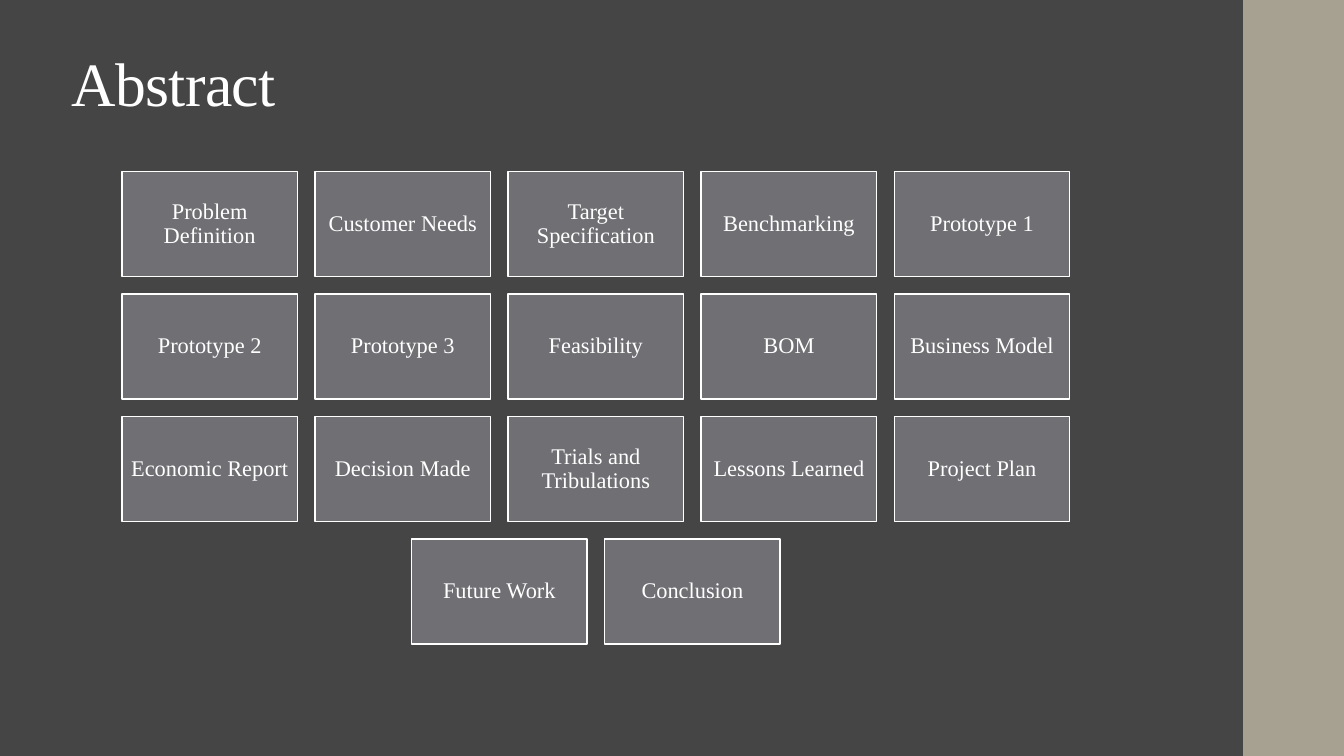
from pptx import Presentation
from pptx.dml.color import RGBColor as Rgb
from pptx.enum.shapes import MSO_SHAPE as Shape
from pptx.enum.text import MSO_ANCHOR as Anchor, MSO_AUTO_SIZE as Fit, PP_ALIGN as Align
from pptx.util import Inches, Pt

FONT = "Times New Roman"
WHITE = "FFFFFF"
DARK = "454545"
GREY = "6F6F74"
SAND = "A7A192"
COLS = 5
TOPICS = [
    "Problem Definition", "Customer Needs", "Target Specification", "Benchmarking", "Prototype 1",
    "Prototype 2", "Prototype 3", "Feasibility", "BOM", "Business Model",
    "Economic Report", "Decision Made", "Trials and Tribulations", "Lessons Learned", "Project Plan",
    "Future Work", "Conclusion",
]


def paint(fmt, color):
    fmt.solid()
    fmt.fore_color.rgb = Rgb.from_string(color)


def write(frame, text, size, align, anchor):
    frame.word_wrap = True
    frame.auto_size = Fit.NONE
    frame.vertical_anchor = anchor
    para = frame.paragraphs[0]
    para.alignment = align
    para.line_spacing = 0.9
    run = para.add_run()
    run.text = text
    run.font.name = FONT
    run.font.size = Pt(size)
    paint(run.font.fill, WHITE)
    return run


def add_rect(slide, left, top, width, height, color):
    rect = slide.shapes.add_shape(
        Shape.RECTANGLE, Inches(left), Inches(top), Inches(width), Inches(height))
    rect.shadow.inherit = False
    paint(rect.fill, color)
    rect.line.fill.background()
    return rect


def add_title(slide, text, left, top, width, height):
    title = slide.shapes.title
    title.left, title.top = Inches(left), Inches(top)
    title.width, title.height = Inches(width), Inches(height)
    run = write(title.text_frame, text, 44, Align.LEFT, Anchor.BOTTOM)
    run._r.get_or_add_rPr().set("spc", "-50")


def add_tile(slide, text, left, top, width, height):
    tile = add_rect(slide, left, top, width, height, GREY)
    paint(tile.line.fill, WHITE)
    tile.line.width = Pt(1.1)
    frame = tile.text_frame
    frame.margin_left = frame.margin_right = Inches(0.07)
    frame.margin_top = frame.margin_bottom = Inches(0.07)
    write(frame, text, 16, Align.CENTER, Anchor.MIDDLE)


def add_grid(slide, topics, left, top, width, height):
    gap = 0.175
    rows = [topics[i:i + COLS] for i in range(0, len(topics), COLS)]
    wide = (width - gap * (COLS - 1)) / COLS
    tall = (height - gap * (len(rows) - 1)) / len(rows)
    for r, row in enumerate(rows):
        inset = (COLS - len(row)) * (wide + gap) / 2
        for c, topic in enumerate(row):
            x = left + inset + c * (wide + gap)
            y = top + r * (tall + gap)
            add_tile(slide, topic, x, y, wide, tall)


def main():
    deck = Presentation()
    deck.slide_width, deck.slide_height = Inches(13.33), Inches(7.5)
    slide = deck.slides.add_slide(deck.slide_layouts[5])
    paint(slide.background.fill, DARK)
    add_title(slide, "Abstract", 0.61, 0.44, 10.6, 0.8)
    add_grid(slide, TOPICS, 1.21, 1.7, 9.4, 4.69)
    add_rect(slide, 12.33, 0, 1, 7.5, SAND)
    deck.save("out.pptx")


if __name__ == "__main__":
    main()
